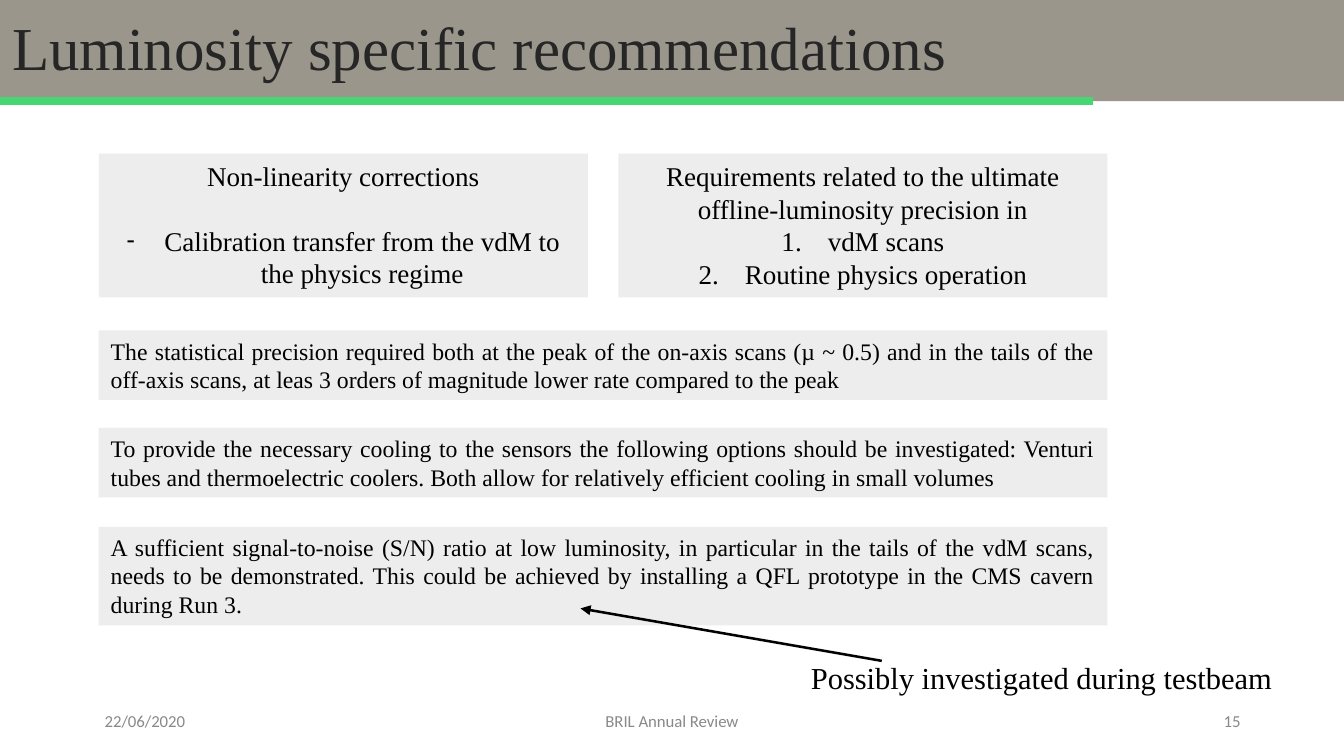
import pptx
import pptx.dml.color
import pptx.enum.shapes
import pptx.enum.text
import pptx.oxml.ns
import pptx.util
from lxml import etree

WIDTH, HEIGHT = 11.02, 6.2
LEFT, CONTENT_WIDTH, GUTTER = 0.81, 8.27, 0.25
COLUMN_WIDTH = (CONTENT_WIDTH - GUTTER) / 2
TITLE_HEIGHT = 0.83
FOOTER_TOP, FOOTER_HEIGHT = 5.75, 0.33
SERIF, SANS = "Times New Roman", "Calibri"
BLACK, PANEL_GREY, FOOTER_GREY = "000000", "EDEDED", "898989"
ALIGN = pptx.enum.text.PP_ALIGN
ANCHOR = pptx.enum.text.MSO_ANCHOR

RECOMMENDATIONS = [
    (2.71, 0.57, "The statistical precision required both at the peak of the on-axis scans (µ ~ 0.5) "
     "and in the tails of the off-axis scans, at leas 3 orders of magnitude lower rate compared to the peak"),
    (3.51, 0.57, "To provide the necessary cooling to the sensors the following options should be "
     "investigated: Venturi tubes and thermoelectric coolers. Both allow for relatively efficient "
     "cooling in small volumes"),
    (4.32, 0.81, "A sufficient signal-to-noise (S/N) ratio at low luminosity, in particular in the tails "
     "of the vdM scans, needs to be demonstrated. This could be achieved by installing a QFL prototype "
     "in the CMS cavern during Run 3."),
]
FOOTERS = [
    (0.76, 2.48, "22/06/2020", ALIGN.LEFT),
    (3.65, 3.72, "BRIL Annual Review", ALIGN.CENTER),
    (7.79, 2.48, "15", ALIGN.RIGHT),
]


def color(hex_value):
    return pptx.dml.color.RGBColor.from_string(hex_value)


def inches(*lengths):
    return [pptx.util.Inches(length) for length in lengths]


def add_xml(parent, tag, **attributes):
    return etree.SubElement(parent, pptx.oxml.ns.qn(tag), **attributes)


def write(shape, text, size, font=SERIF, hex_value=BLACK, align=ALIGN.LEFT, anchor=ANCHOR.TOP, wrap=True):
    """Fill a shape with text, one paragraph to a line, in one style."""
    frame = shape.text_frame
    frame.text = text
    frame.word_wrap = wrap
    frame.vertical_anchor = anchor
    for paragraph in frame.paragraphs:
        paragraph.alignment = align
        for run in paragraph.runs:
            run.font.size = pptx.util.Pt(size)
            run.font.name = font
            run.font.color.rgb = color(hex_value)
    return frame.paragraphs


def add_panel(slide, left, top, width, height, fill=PANEL_GREY):
    panel = slide.shapes.add_shape(pptx.enum.shapes.MSO_SHAPE.RECTANGLE, *inches(left, top, width, height))
    panel.shadow.inherit = False
    panel.fill.solid()
    panel.fill.fore_color.rgb = color(fill)
    panel.line.fill.background()
    return panel


def add_text(slide, left, top, width, height, text, size, **style):
    box = slide.shapes.add_textbox(*inches(left, top, width, height))
    write(box, text, size, **style)


def add_line(slide, start, end, hex_value, weight, arrow=False):
    line = slide.shapes.add_connector(pptx.enum.shapes.MSO_CONNECTOR.STRAIGHT, *inches(*start, *end))
    line.line.color.rgb = color(hex_value)
    line.line.width = pptx.util.Pt(weight)
    if arrow:
        add_xml(line.line._get_or_add_ln(), "a:tailEnd", type="triangle")
    add_xml(line._element.spPr, "a:effectLst")


def add_bullet(paragraph, indent, tag, font, **attributes):
    """Give a paragraph a hanging indent and a list marker."""
    properties = paragraph._p.get_or_add_pPr()
    hang = pptx.util.Inches(indent)
    properties.set("marL", str(hang))
    properties.set("indent", str(-hang))
    add_xml(properties, "a:buFont", typeface=font)
    add_xml(properties, tag, **attributes)


def add_title(slide):
    bar = add_panel(slide, 0, 0, WIDTH, TITLE_HEIGHT, "9A968B")
    title, = write(bar, "Luminosity specific recommendations", 36, hex_value="262626", anchor=ANCHOR.MIDDLE)
    title.line_spacing = 0.9
    add_line(slide, (0, TITLE_HEIGHT), (8.96, TITLE_HEIGHT), "46D772", 4.5)


def add_topics(slide):
    corrections, requirements = [
        add_panel(slide, LEFT + column * (COLUMN_WIDTH + GUTTER), 1.26, COLUMN_WIDTH, 1.18)
        for column in range(2)
    ]
    heading, transfer = write(
        corrections,
        "Non-linearity corrections\nCalibration transfer from the vdM to the physics regime",
        16, align=ALIGN.CENTER)
    heading.space_after = pptx.util.Pt(19)
    add_bullet(transfer, 0.31, "a:buChar", SANS, char="-")

    _, *cases = write(
        requirements,
        "Requirements related to the ultimate offline-luminosity precision in\n"
        "vdM scans\nRoutine physics operation",
        16, align=ALIGN.CENTER)
    for case in cases:
        add_bullet(case, 0.38, "a:buAutoNum", SERIF, type="arabicPeriod")


def main():
    presentation = pptx.Presentation()
    presentation.slide_width, presentation.slide_height = inches(WIDTH, HEIGHT)
    slide = presentation.slides.add_slide(presentation.slide_layouts[6])

    add_title(slide)
    for left, width, text, align in FOOTERS:
        add_text(slide, left, FOOTER_TOP, width, FOOTER_HEIGHT, text, 9.9, font=SANS,
                 hex_value=FOOTER_GREY, align=align, anchor=ANCHOR.MIDDLE)
    add_topics(slide)
    for top, height, text in RECOMMENDATIONS:
        write(add_panel(slide, LEFT, top, CONTENT_WIDTH, height), text, 14, align=ALIGN.JUSTIFY)
    add_line(slide, (7.23, 5.42), (4.76, 4.99), BLACK, 1.5, arrow=True)
    add_text(slide, 6.55, 5.36, 4.02, 0.4, "Possibly investigated during testbeam", 18, wrap=False)

    presentation.save("out.pptx")


if __name__ == "__main__":
    main()
